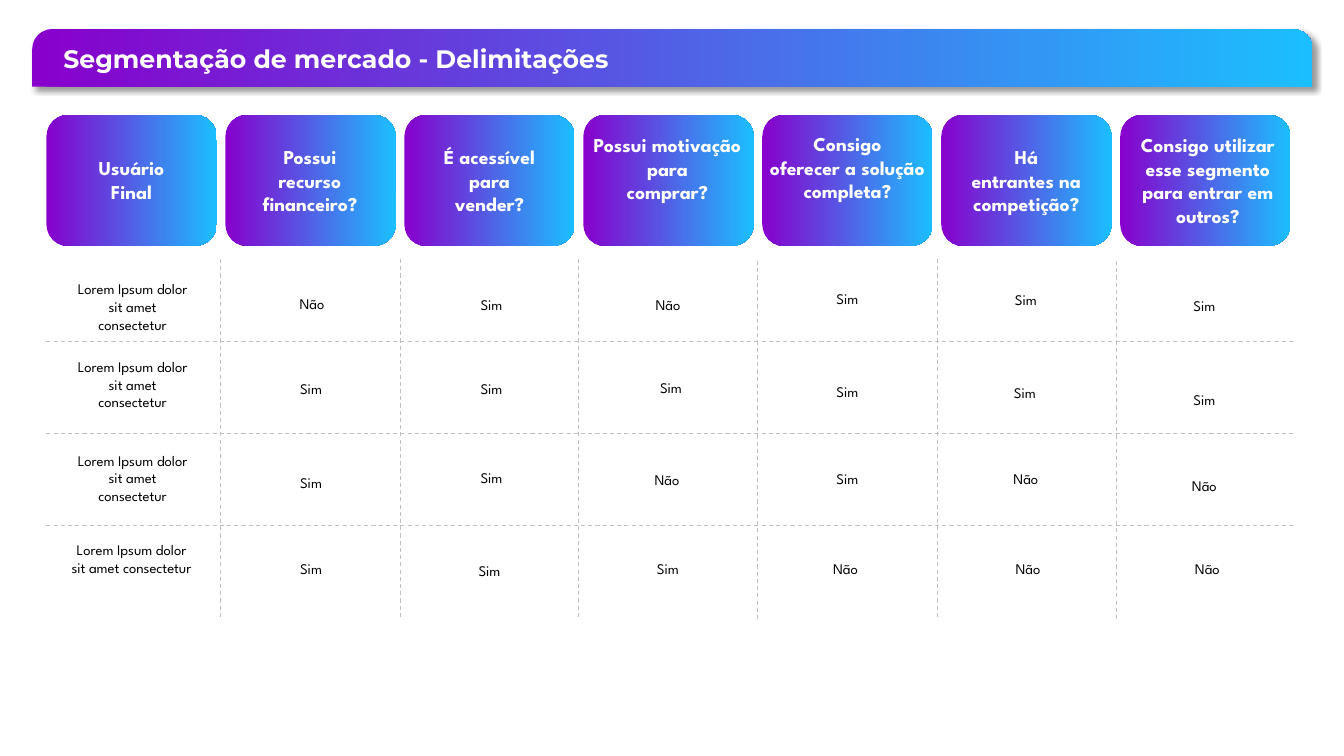
import dataclasses

import lxml.etree
import pptx
import pptx.dml.color
import pptx.enum.dml
import pptx.enum.shapes
import pptx.enum.text
import pptx.oxml.ns
import pptx.util

Inches = pptx.util.Inches
Pt = pptx.util.Pt
Shape = pptx.enum.shapes.MSO_SHAPE
Align = pptx.enum.text.PP_ALIGN


@dataclasses.dataclass(frozen=True)
class Theme:
    purple: str = "8800CC"
    cyan: str = "1BBFFF"
    white: str = "FFFFFF"
    black: str = "000000"
    rule: str = "BFBFBF"
    title_font: str = "Montserrat"
    body_font: str = "League Spartan"
    title_size: float = 18
    header_size: float = 14
    cell_size: float = 10.5
    rule_width: float = 0.75


class SlideBuilder:
    def __init__(self, slide, theme):
        self.slide = slide
        self.theme = theme

    def color(self, value):
        return pptx.dml.color.RGBColor.from_string(value)

    def gradient_box(self, kind, left, top, width, height):
        shape = self.slide.shapes.add_shape(
            kind, Inches(left), Inches(top), Inches(width), Inches(height))
        shape.shadow.inherit = False
        shape.line.fill.background()
        shape.fill.gradient()
        shape.fill.gradient_angle = 0
        for stop, value in zip(shape.fill.gradient_stops, (self.theme.purple, self.theme.cyan)):
            stop.color.rgb = self.color(value)
        return shape

    def drop_shadow(self, shape, blur, distance, angle, opacity):
        qn = pptx.oxml.ns.qn
        effects = shape.element.spPr.find(qn("a:effectLst"))
        shadow = lxml.etree.SubElement(
            effects, qn("a:outerShdw"), blurRad=str(Pt(blur)), dist=str(Pt(distance)),
            dir=str(angle * 60000), algn="tl", rotWithShape="0")
        shade = lxml.etree.SubElement(shadow, qn("a:srgbClr"), val=self.theme.black)
        lxml.etree.SubElement(shade, qn("a:alpha"), val=str(opacity * 1000))

    def text(self, words, left, top, width, height, size, color,
             font=None, bold=False, align=Align.CENTER):
        box = self.slide.shapes.add_textbox(
            Inches(left), Inches(top), Inches(width), Inches(height))
        frame = box.text_frame
        frame.word_wrap = True
        frame.auto_size = pptx.enum.text.MSO_AUTO_SIZE.SHAPE_TO_FIT_TEXT
        frame.text = words
        for paragraph in frame.paragraphs:
            paragraph.alignment = align
            for run in paragraph.runs:
                run.font.name = font or self.theme.body_font
                run.font.size = Pt(size)
                run.font.bold = bold
                run.font.color.rgb = self.color(color)

    def dashed_line(self, left, top, right, bottom):
        connector = self.slide.shapes.add_connector(
            pptx.enum.shapes.MSO_CONNECTOR.STRAIGHT,
            Inches(left), Inches(top), Inches(right), Inches(bottom))
        connector.line.color.rgb = self.color(self.theme.rule)
        connector.line.width = Pt(self.theme.rule_width)
        connector.line.dash_style = pptx.enum.dml.MSO_LINE.DASH
        lxml.etree.SubElement(connector.element.spPr, pptx.oxml.ns.qn("a:effectLst"))


HEADERS = [
    ("Usuário\nFinal", 0.66, 1.5, 1.29, 0.57),
    ("Possui\nrecurso\nfinanceiro?", 2.43, 1.39, 1.29, 0.81),
    ("É acessível para vender?", 4.21, 1.39, 1.29, 0.81),
    ("Possui motivação para\ncomprar?", 5.78, 1.27, 1.68, 1.04),
    ("Consigo\voferecer a solução completa?", 7.48, 1.26, 1.85, 1.04),
    ("Há\ventrantes na competição?", 9.4, 1.39, 1.56, 0.81),
    ("Consigo utilizar esse segmento para entrar em outros?", 11.15, 1.27, 1.66, 1.04),
]
SEGMENT = "Lorem Ipsum dolor sit amet consectetur"
SEGMENT_BOXES = [(0.67, 2.73, 1.29), (0.67, 3.5, 1.29), (0.67, 4.43, 1.29), (0.6, 5.32, 1.41)]
ANSWERS = [
    [("Não", 2.45, 2.88), ("Sim", 2.44, 3.72), ("Sim", 2.44, 4.65), ("Sim", 2.44, 5.5)],
    [("Sim", 4.23, 2.89), ("Sim", 4.23, 3.72), ("Sim", 4.23, 4.6), ("Sim", 4.21, 5.52)],
    [("Não", 5.98, 2.89), ("Sim", 6.01, 3.71), ("Não", 5.97, 4.62), ("Sim", 5.98, 5.5)],
    [("Sim", 7.76, 2.83), ("Sim", 7.76, 3.75), ("Sim", 7.76, 4.61), ("Não", 7.74, 5.5)],
    [("Sim", 9.53, 2.84), ("Sim", 9.52, 3.76), ("Não", 9.53, 4.61), ("Não", 9.55, 5.5)],
    [("Sim", 11.3, 2.9), ("Sim", 11.3, 3.83), ("Não", 11.3, 4.68), ("Não", 11.33, 5.5)],
]
COLUMN_RULES = [(2.19, 2.57), (3.97, 2.57), (5.74, 2.57), (7.51, 2.59), (9.3, 2.57), (11.07, 2.59)]
ROW_RULES = [3.39, 4.3, 5.21]
COLUMN_PITCH = 10.65 / 6


def main():
    presentation = pptx.Presentation()
    presentation.slide_width = Inches(13.33)
    presentation.slide_height = Inches(7.5)
    theme = Theme()
    builder = SlideBuilder(presentation.slides.add_slide(presentation.slide_layouts[6]), theme)

    banner = builder.gradient_box(Shape.ROUND_2_SAME_RECTANGLE, 0.32, 0.29, 12.7, 0.57)
    banner.adjustments[0] = 0.34
    builder.drop_shadow(banner, blur=4, distance=3, angle=45, opacity=40)
    builder.text("Segmentação de mercado - Delimitações", 0.53, 0.38, 5.65, 0.4,
                 theme.title_size, theme.white, theme.title_font, True, Align.JUSTIFY)

    for column in range(len(HEADERS)):
        builder.gradient_box(Shape.ROUNDED_RECTANGLE, 0.46 + column * COLUMN_PITCH, 1.14, 1.69, 1.3)
    for words, left, top, width, height in HEADERS:
        builder.text(words, left, top, width, height, theme.header_size, theme.white, bold=True)

    for left, top in COLUMN_RULES:
        builder.dashed_line(left, top, left, top + 3.58)
    for top in ROW_RULES:
        builder.dashed_line(0.46, top, 12.83, top)

    for left, top, width in SEGMENT_BOXES:
        builder.text(SEGMENT, left, top, width, 0.63, theme.cell_size, theme.black)
    for column in ANSWERS:
        for answer, left, top in column:
            builder.text(answer, left, top, 1.29, 0.28, theme.cell_size, theme.black)

    presentation.save("out.pptx")


if __name__ == "__main__":
    main()
